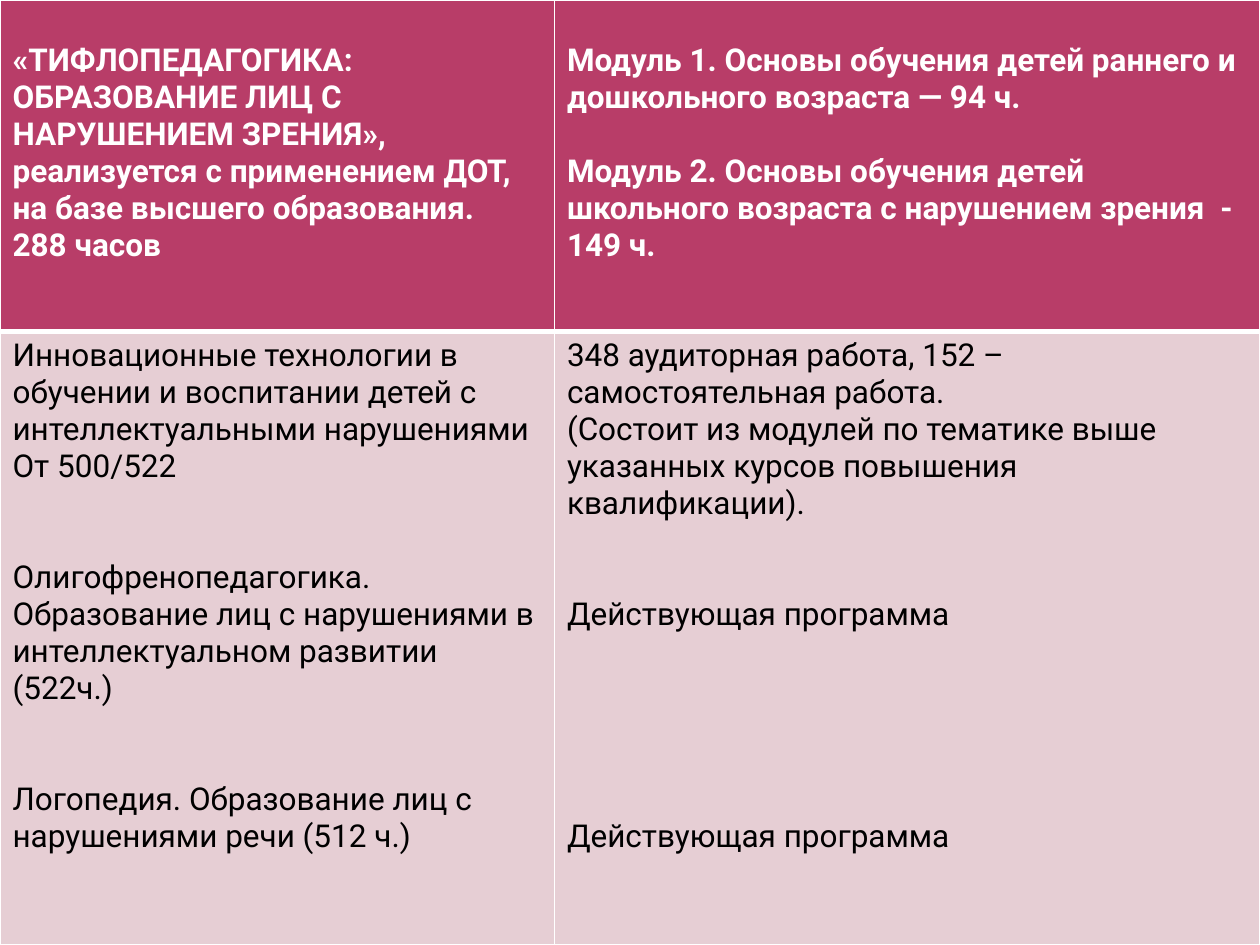
from pptx import Presentation
from pptx.dml.color import RGBColor
from pptx.oxml import parse_xml
from pptx.oxml.ns import nsdecls
from pptx.util import Inches, Pt

COLORS = {"header": "B83D68", "body": "E6CED4", "white": "FFFFFF", "black": "000000"}
FONT = "Roboto"
FONT_SIZE = 18
LINE = 21.1
COLUMN_WIDTHS = (4.4, 5.6)
HEADER_HEIGHT = 2.63

# Each paragraph is (blank lines' worth of space before, wording).
HEADER = (
    [
        (0, "«ТИФЛОПЕДАГОГИКА: ОБРАЗОВАНИЕ ЛИЦ С НАРУШЕНИЕМ ЗРЕНИЯ», "
            "реализуется с применением ДОТ, на базе высшего образования."),
        (0, "288 часов"),
    ],
    [
        (0, "Модуль 1. Основы обучения детей раннего и дошкольного возраста — 94 ч."),
        (1, "Модуль 2. Основы обучения детей школьного возраста с нарушением зрения  - 149 ч."),
    ],
)
PROGRAMS = (
    [
        (0, "Инновационные технологии в обучении и воспитании детей "
            "с интеллектуальными нарушениями"),
        (0, "От 500/522"),
        (2, "Олигофренопедагогика. Образование лиц с нарушениями "
            "в интеллектуальном развитии (522ч.)"),
        (2, "Логопедия. Образование лиц с нарушениями речи (512 ч.)"),
    ],
    [
        (0, "348 аудиторная работа, 152 – самостоятельная работа."),
        (0, "(Состоит из модулей по тематике выше указанных курсов повышения квалификации)."),
        (2, "Действующая программа"),
        (5, "Действующая программа"),
    ],
)


def add_borders(cell, widths):
    """Draw white cell borders with the given point widths by side."""
    properties = cell._tc.get_or_add_tcPr()
    for side in "LRTB":
        properties.append(parse_xml(
            f'<a:ln{side} {nsdecls("a")} w="{Pt(widths[side])}">'
            f'<a:solidFill><a:srgbClr val="{COLORS["white"]}"/></a:solidFill>'
            f'</a:ln{side}>'))


def fill_cell(cell, paragraphs, fill, color, bold, top, borders):
    """Style one cell and write its paragraphs."""
    add_borders(cell, borders)
    cell.fill.solid()
    cell.fill.fore_color.rgb = RGBColor.from_string(COLORS[fill])
    cell.margin_left = cell.margin_right = Inches(0.1)
    cell.margin_top, cell.margin_bottom = Inches(top), Inches(0.05)
    frame = cell.text_frame
    for index, (blank_lines, wording) in enumerate(paragraphs):
        paragraph = frame.add_paragraph() if index else frame.paragraphs[0]
        paragraph.text = wording
        if blank_lines:
            paragraph.space_before = Pt(round(blank_lines * LINE, 1))
        font = paragraph.font
        font.name, font.size, font.bold = FONT, Pt(FONT_SIZE), bold
        font.color.rgb = RGBColor.from_string(COLORS[color])


def add_program_table(slide, left, top, width, height):
    """Place the table of courses and their modules in the given box."""
    table = slide.shapes.add_table(2, 2, left, top, width, height).table
    for column, column_width in zip(table.columns, COLUMN_WIDTHS):
        column.width = Inches(column_width)
    table.rows[0].height = Inches(HEADER_HEIGHT)
    table.rows[1].height = height - Inches(HEADER_HEIGHT)
    thin = dict.fromkeys("LRTB", 1)
    for column, (header, programs) in enumerate(zip(HEADER, PROGRAMS)):
        fill_cell(table.cell(0, column), header, "header", "white", True, 0.34, thin | {"B": 3})
        fill_cell(table.cell(1, column), programs, "body", "black", False, 0.05, thin | {"T": 3})


def main():
    """Build and save the presentation."""
    presentation = Presentation()
    presentation.slide_width, presentation.slide_height = Inches(10), Inches(7.5)
    slide = presentation.slides.add_slide(presentation.slide_layouts[6])
    add_program_table(slide, 0, 0, Inches(10), Inches(7.5))
    presentation.save("out.pptx")


if __name__ == "__main__":
    main()
